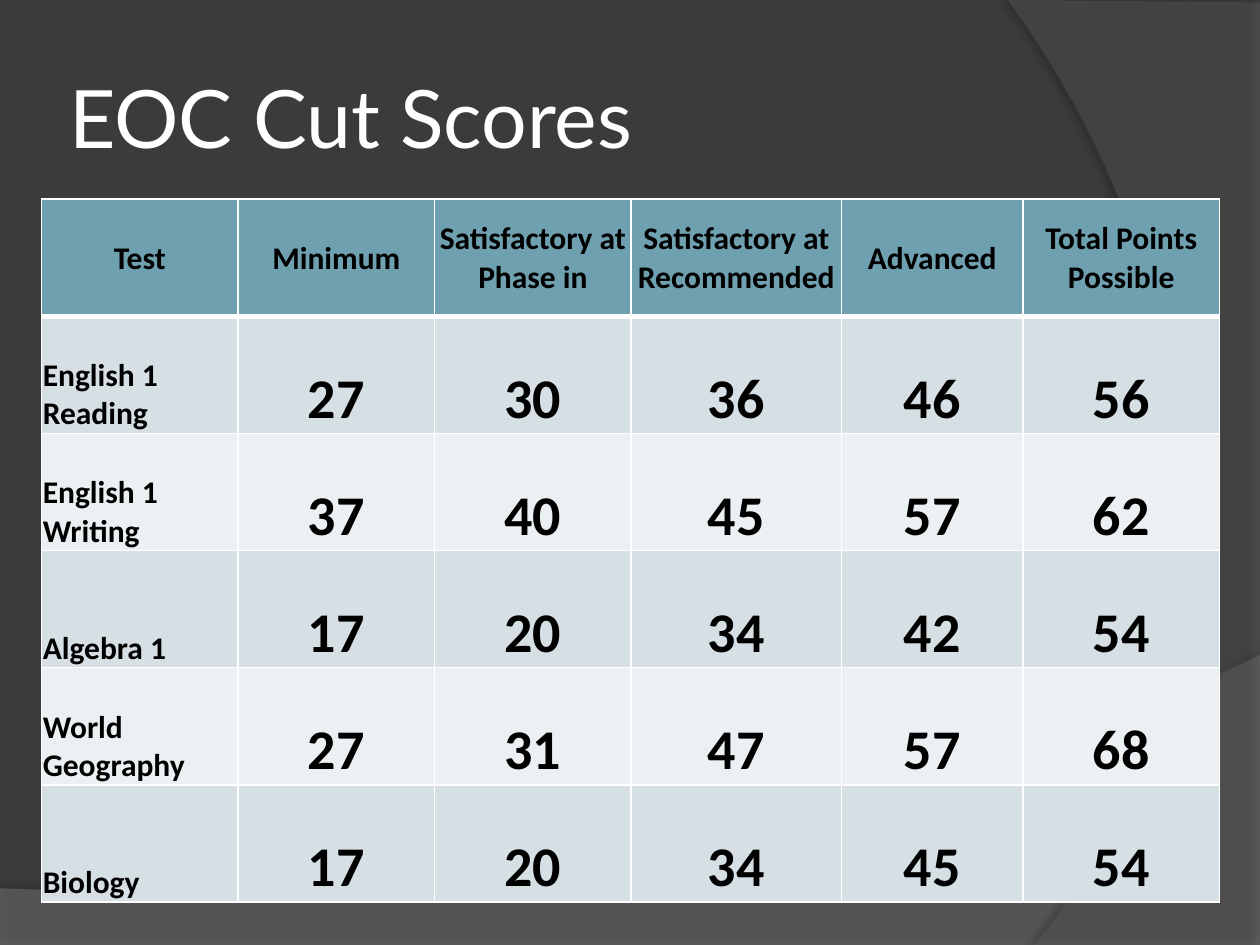
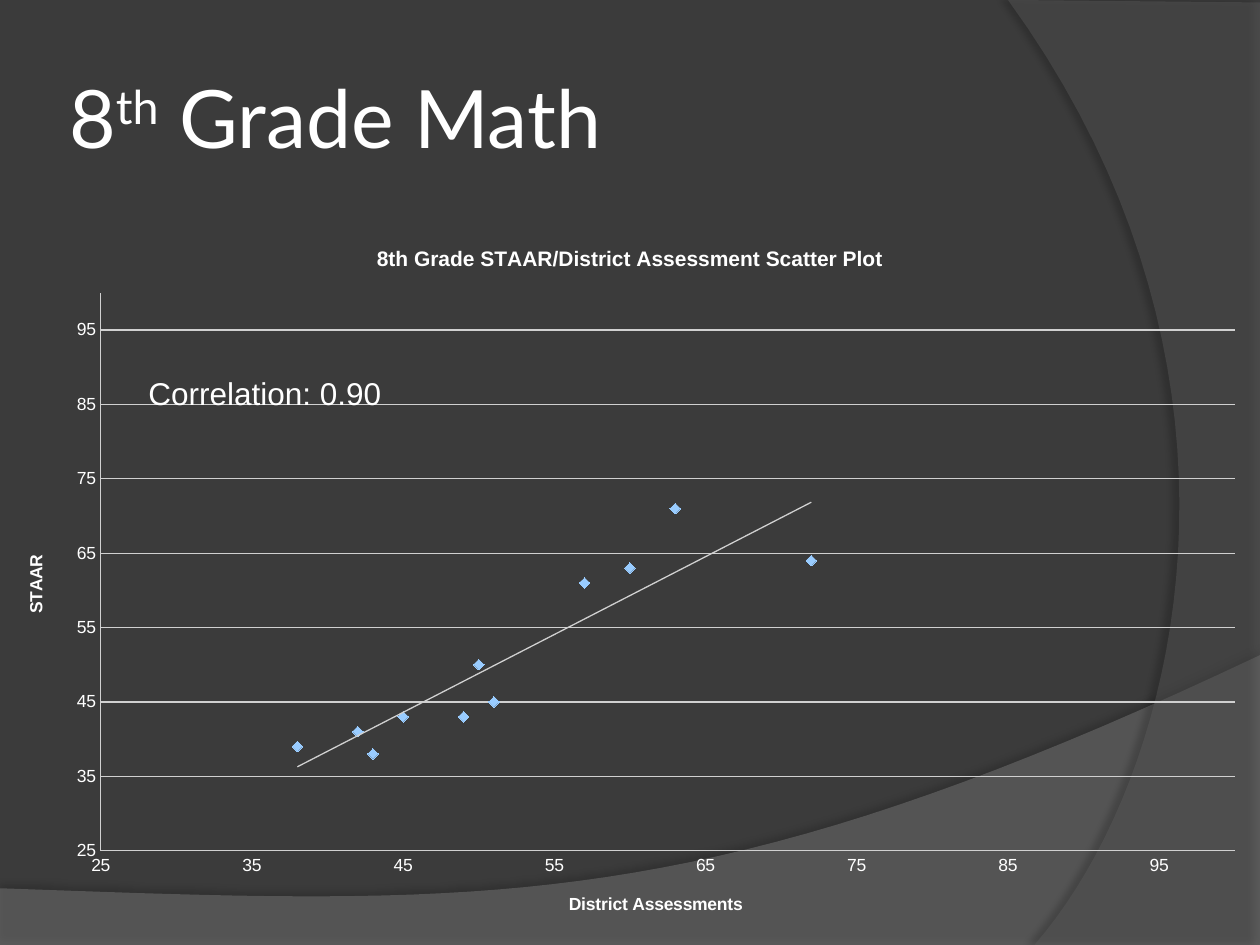
"""Build two slides on end-of-course cut scores and the 8th grade math correlation."""
from dataclasses import dataclass

from lxml import etree
from pptx import Presentation
from pptx.chart.data import XyChartData
from pptx.dml.color import RGBColor
from pptx.enum.chart import XL_CHART_TYPE, XL_MARKER_STYLE, XL_TICK_MARK
from pptx.enum.text import MSO_ANCHOR, MSO_AUTO_SIZE, PP_ALIGN
from pptx.oxml.ns import qn
from pptx.util import Inches, Pt

SCATTER = XL_CHART_TYPE.XY_SCATTER
DIAMOND = XL_MARKER_STYLE.DIAMOND
NO_TICK = XL_TICK_MARK.NONE
MIDDLE, BOTTOM = MSO_ANCHOR.MIDDLE, MSO_ANCHOR.BOTTOM
LEFT, CENTER = PP_ALIGN.LEFT, PP_ALIGN.CENTER
NO_FIT, GROW = MSO_AUTO_SIZE.NONE, MSO_AUTO_SIZE.SHAPE_TO_FIT_TEXT

BACKDROP = RGBColor(0x3B, 0x3B, 0x3B)
SWOOSH_GRAY = RGBColor(0x7F, 0x7F, 0x7F)
ARC_GRAY = RGBColor(0x5E, 0x5E, 0x5E)
WHITE = RGBColor(0xFF, 0xFF, 0xFF)
BLACK = RGBColor(0x00, 0x00, 0x00)
HEADER_TEAL = RGBColor(0x6E, 0xA0, 0xB0)
ROW_BANDS = (RGBColor(0xD5, 0xDF, 0xE4), RGBColor(0xEB, 0xF0, 0xF2))
MARKER_BLUE = RGBColor(0x99, 0xCC, 0xFF)
GRID_GRAY = RGBColor(0xD0, 0xD0, 0xD0)

TITLE_FONT, TABLE_FONT, CHART_FONT = "Lato", "Calibri", "Arial"
CURVE_STEPS = 40
AXIS_MIN, AXIS_MAX, AXIS_STEP = 25, 100, 10

COLUMN_WIDTHS = (1.56, 1.56, 1.56, 1.67, 1.44, 1.56)
HEADINGS = ("Test", "Minimum", "Satisfactory at Phase in",
            "Satisfactory at Recommended", "Advanced", "Total Points Possible")
CUT_SCORES = (
    ("English 1 Reading", 27, 30, 36, 46, 56),
    ("English 1 Writing", 37, 40, 45, 57, 62),
    ("Algebra 1", 17, 20, 34, 42, 54),
    ("World Geography", 27, 31, 47, 57, 68),
    ("Biology", 17, 20, 34, 45, 54),
)
DISTRICT_SCORES = (50, 42, 49, 43, 57, 63, 60, 45, 38, 51, 72)
STAAR_SCORES = (50, 41, 43, 38, 61, 71, 63, 43, 39, 45, 64)

Point = tuple[float, float]


@dataclass(frozen=True)
class Sweep:
    """A translucent background panel with one curved edge, in inches."""
    corners: tuple[Point, ...]
    curve: tuple[Point, Point, Point, Point]
    color: RGBColor
    opacity: int
    shadow_opacity: int
    shadow_distance: float
    shadow_angle: int


SWEEPS = (
    Sweep(((0, 7.5), (10, 7.5)), ((10, 5.2), (5.59, 7.29), (3.91, 7.19), (0, 7.05)),
          SWOOSH_GRAY, 45, 35, 3.5, 270),
    Sweep(((10, 0.02), (10, 7.5)), ((8.21, 7.5), (9.35, 6.19), (10.18, 3), (8, 0)),
          ARC_GRAY, 40, 45, 4, 180),
)


@dataclass(frozen=True)
class TextStyle:
    """The look of one run of text."""
    font: str
    size: float
    color: RGBColor
    bold: bool = False


TITLE_STYLE = TextStyle(TITLE_FONT, 46, WHITE)
LABEL_STYLE = TextStyle(TABLE_FONT, 18, BLACK, True)
SCORE_STYLE = TextStyle(TABLE_FONT, 32, BLACK, True)
CHART_STYLE = TextStyle(CHART_FONT, 10, WHITE)
AXIS_TITLE_STYLE = TextStyle(CHART_FONT, 10, WHITE, True)
CHART_TITLE_STYLE = TextStyle(CHART_FONT, 12, WHITE, True)
NOTE_STYLE = TextStyle(CHART_FONT, 18, WHITE)


def apply_style(font, style: TextStyle) -> None:
    """Set the font, size, weight and colour."""
    font.name, font.size, font.bold = style.font, Pt(style.size), style.bold
    font.color.rgb = style.color


def add_run(paragraph, text: str, style: TextStyle):
    """Append a styled run and return it."""
    run = paragraph.add_run()
    run.text = text
    apply_style(run.font, style)
    return run


def add_child(parent, tag: str, **attributes):
    """Append an XML child with the given attributes."""
    return etree.SubElement(parent, qn(tag), {k: str(v) for k, v in attributes.items()})


def bezier(curve: tuple[Point, Point, Point, Point]) -> list[Point]:
    """Sample a cubic curve at equal steps."""
    points = []
    for step in range(CURVE_STEPS + 1):
        t = step / CURVE_STEPS
        weights = ((1 - t) ** 3, 3 * t * (1 - t) ** 2, 3 * t * t * (1 - t), t ** 3)
        points.append(tuple(sum(w * p[axis] for w, p in zip(weights, curve)) for axis in (0, 1)))
    return points


def add_sweep(slide, sweep: Sweep):
    """Draw a background panel with its soft shadow."""
    outline = [(Inches(x), Inches(y)) for x, y in (*sweep.corners, *bezier(sweep.curve))]
    builder = slide.shapes.build_freeform(*outline[0], scale=1.0)
    builder.add_line_segments(outline[1:], close=True)
    panel = builder.convert_to_shape()
    panel.fill.solid()
    panel.fill.fore_color.rgb = sweep.color
    panel.line.fill.background()
    properties = panel.element.spPr
    color = properties.find(qn("a:solidFill"))[0]
    add_child(color, "a:alpha", val=sweep.opacity * 1000)
    effects = add_child(properties, "a:effectLst")
    shadow = add_child(effects, "a:outerShdw", blurRad=Pt(4), dist=Pt(sweep.shadow_distance),
                       dir=sweep.shadow_angle * 60000, algn="ctr", rotWithShape=0)
    shade = add_child(shadow, "a:srgbClr", val=str(BLACK))
    add_child(shade, "a:alpha", val=sweep.shadow_opacity * 1000)
    return panel


def decorate_layout(layout, slide) -> None:
    """Place the background colour and panels on the shared layout."""
    layout.background.fill.solid()
    layout.background.fill.fore_color.rgb = BACKDROP
    for index, sweep in enumerate(SWEEPS):
        layout.shapes.element.insert(2 + index, add_sweep(slide, sweep).element)


def set_title(slide, *parts: str) -> None:
    """Fill the title; every second part is superscript."""
    title = slide.shapes.title
    title.left, title.top = Inches(0.5), Inches(0.3)
    title.width, title.height = Inches(8.17), Inches(1.25)
    frame = title.text_frame
    frame.auto_size, frame.word_wrap, frame.vertical_anchor = NO_FIT, True, MIDDLE
    frame.margin_left = frame.margin_right = Inches(0.05)
    frame.margin_top = frame.margin_bottom = Inches(0.05)
    frame.paragraphs[0].alignment = LEFT
    for index, part in enumerate(parts):
        run = add_run(frame.paragraphs[0], part, TITLE_STYLE)
        if index % 2:
            run.font._element.set("baseline", "30000")


def set_borders(cell, top: float, bottom: float) -> None:
    """Draw white borders around a cell, widths in points."""
    properties = cell._tc.get_or_add_tcPr()
    widths = {"a:lnL": 1, "a:lnR": 1, "a:lnT": top, "a:lnB": bottom}
    for index, (tag, width) in enumerate(widths.items()):
        border = add_child(properties, tag, w=Pt(width))
        add_child(add_child(border, "a:solidFill"), "a:srgbClr", val=str(WHITE))
        properties.insert(index, border)


def add_cut_scores(slide) -> None:
    """Draw the table of cut scores."""
    rows = (HEADINGS, *CUT_SCORES)
    table = slide.shapes.add_table(len(rows), len(HEADINGS), Inches(0.33), Inches(1.58),
                                   Inches(9.33), Inches(5.58)).table
    for column, width in zip(table.columns, COLUMN_WIDTHS):
        column.width = Inches(width)
    for r, values in enumerate(rows):
        table.rows[r].height = Inches(0.93)
        for c, value in enumerate(values):
            cell = table.cell(r, c)
            is_header, is_label = r == 0, r == 0 or c == 0
            cell.fill.solid()
            cell.fill.fore_color.rgb = HEADER_TEAL if is_header else ROW_BANDS[(r - 1) % 2]
            cell.margin_left = cell.margin_right = cell.margin_top = Inches(0.01)
            cell.margin_bottom = 0
            cell.vertical_anchor = MIDDLE if is_header else BOTTOM
            paragraph = cell.text_frame.paragraphs[0]
            paragraph.alignment = CENTER if is_header or c else LEFT
            add_run(paragraph, str(value), LABEL_STYLE if is_label else SCORE_STYLE)
            set_borders(cell, 3 if r == 1 else 1, 3 if is_header else 1)


def format_axis(axis, title: str) -> None:
    """Give an axis its title, scale and line."""
    add_run(axis.axis_title.text_frame.paragraphs[0], title, AXIS_TITLE_STYLE)
    axis.minimum_scale, axis.maximum_scale, axis.major_unit = AXIS_MIN, AXIS_MAX, AXIS_STEP
    axis.major_tick_mark = axis.minor_tick_mark = NO_TICK
    axis.format.line.color.rgb = GRID_GRAY
    axis.format.line.width = Pt(0.75)
    apply_style(axis.tick_labels.font, CHART_STYLE)


def add_trend(series) -> None:
    """Add a thin linear trend line to a series."""
    trend = etree.Element(qn("c:trendline"))
    line = add_child(add_child(trend, "c:spPr"), "a:ln", w=Pt(0.75))
    add_child(add_child(line, "a:solidFill"), "a:srgbClr", val=str(GRID_GRAY))
    add_child(trend, "c:trendlineType", val="linear")
    add_child(trend, "c:dispRSqr", val=0)
    add_child(trend, "c:dispEq", val=0)
    series._element.find(qn("c:xVal")).addprevious(trend)


def place_plot(chart, x: float, y: float, w: float, h: float) -> None:
    """Fix the inner plot area as fractions of the chart."""
    plot_area = chart._chartSpace.chart.plotArea
    for old in plot_area.findall(qn("c:layout")):
        plot_area.remove(old)
    layout = etree.Element(qn("c:layout"))
    manual = add_child(layout, "c:manualLayout")
    add_child(manual, "c:layoutTarget", val="inner")
    add_child(manual, "c:xMode", val="edge")
    add_child(manual, "c:yMode", val="edge")
    for tag, value in zip("xywh", (x, y, w, h)):
        add_child(manual, f"c:{tag}", val=value)
    plot_area.insert(0, layout)


def add_scatter(slide) -> None:
    """Draw the scatter plot of STAAR against district scores."""
    data = XyChartData()
    points = data.add_series("Series 1")
    for district, staar in zip(DISTRICT_SCORES, STAAR_SCORES):
        points.add_data_point(district, staar)
    chart = slide.shapes.add_chart(SCATTER, 0, Inches(1.75), Inches(10), Inches(5.75), data).chart
    apply_style(chart.font, CHART_STYLE)
    chart.has_legend = False
    add_run(chart.chart_title.text_frame.paragraphs[0],
            "8th Grade STAAR/District Assessment Scatter Plot", CHART_TITLE_STYLE)
    format_axis(chart.category_axis, "District Assessments")
    format_axis(chart.value_axis, "STAAR")
    chart.category_axis.has_major_gridlines = False
    chart.value_axis.has_major_gridlines = True
    gridline = chart.value_axis.major_gridlines.format.line
    gridline.color.rgb, gridline.width = GRID_GRAY, Pt(0.75)
    chart.plots[0].vary_by_categories = False
    series = chart.plots[0].series[0]
    series.format.line.fill.background()
    series.marker.style, series.marker.size = DIAMOND, 6
    series.marker.format.fill.solid()
    series.marker.format.fill.fore_color.rgb = MARKER_BLUE
    series.marker.format.line.fill.background()
    add_trend(series)
    place_plot(chart, 0.08, 0.1, 0.9, 0.77)


def add_correlation(slide) -> None:
    """Write the correlation over the plot."""
    note = slide.shapes.add_textbox(Inches(1.08), Inches(2.92), Inches(2.25), Inches(0.4))
    note.text_frame.word_wrap, note.text_frame.auto_size = True, GROW
    add_run(note.text_frame.paragraphs[0], "Correlation: 0.90", NOTE_STYLE)


def main() -> None:
    """Build and save the presentation."""
    deck = Presentation()
    deck.slide_width, deck.slide_height = Inches(10), Inches(7.5)
    title_only = deck.slide_layouts[5]
    scores_slide = deck.slides.add_slide(title_only)
    decorate_layout(title_only, scores_slide)
    set_title(scores_slide, "EOC Cut Scores")
    add_cut_scores(scores_slide)

    math_slide = deck.slides.add_slide(title_only)
    set_title(math_slide, "8", "th", " Grade Math")
    add_scatter(math_slide)
    add_correlation(math_slide)
    deck.save("out.pptx")


if __name__ == "__main__":
    main()
